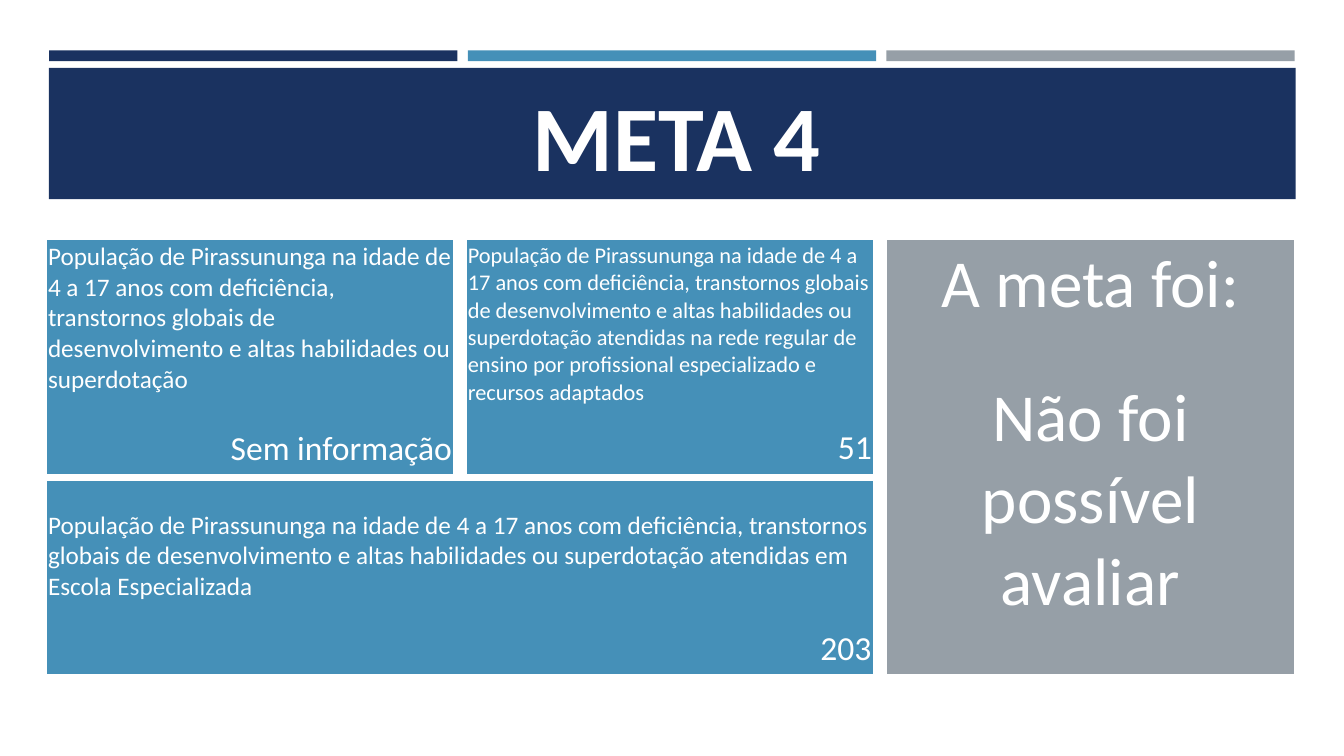
from dataclasses import dataclass

from pptx import Presentation
from pptx.dml.color import RGBColor
from pptx.enum.shapes import MSO_SHAPE
from pptx.enum.text import MSO_ANCHOR, PP_ALIGN
from pptx.util import Cm, Pt

RECTANGLE = MSO_SHAPE.RECTANGLE
BOTTOM, MIDDLE = MSO_ANCHOR.BOTTOM, MSO_ANCHOR.MIDDLE
LEFT, CENTER, RIGHT = PP_ALIGN.LEFT, PP_ALIGN.CENTER, PP_ALIGN.RIGHT
PLAIN_TABLE_STYLE = "{2D5ABB26-0587-4C30-8999-92F81FD0307C}"
BLANK_LAYOUT = 6


@dataclass(frozen=True)
class Theme:
    """Colours, font and type sizes of the slide."""

    navy: RGBColor = RGBColor(0x1A, 0x32, 0x60)
    blue: RGBColor = RGBColor(0x45, 0x90, 0xB8)
    gray: RGBColor = RGBColor(0x96, 0x9F, 0xA7)
    white: RGBColor = RGBColor(0xFF, 0xFF, 0xFF)
    font: str = "Calibri"
    title: int = 66
    verdict: int = 48
    value: int = 24
    label: int = 18
    long_label: int = 16


THEME = Theme()
POPULATION = (
    "População de Pirassununga na idade de 4 a 17 anos com deficiência, "
    "transtornos globais de desenvolvimento e altas habilidades ou superdotação"
)


def add_bar(slide, left, top, width, height, color):
    """Draw a plain filled rectangle, measured in centimetres."""
    shape = slide.shapes.add_shape(RECTANGLE, Cm(left), Cm(top), Cm(width), Cm(height))
    shape.shadow.inherit = False
    shape.fill.solid()
    shape.fill.fore_color.rgb = color
    shape.line.fill.background()


def write(text_frame, text, size, alignment, bold=False):
    """Put one white run into the first paragraph of a text frame."""
    paragraph = text_frame.paragraphs[0]
    paragraph.alignment = alignment
    run = paragraph.add_run()
    run.text = text
    run.font.name = THEME.font
    run.font.size = Pt(size)
    run.font.bold = bold
    run.font.color.rgb = THEME.white


def add_title(slide, text):
    """Place the title over the banner."""
    text_box = slide.shapes.add_textbox(Cm(1.83), Cm(1.96), Cm(30.43), Cm(2.82))
    text_frame = text_box.text_frame
    text_frame.word_wrap = True
    text_frame.vertical_anchor = BOTTOM
    text_frame.margin_top = text_frame.margin_bottom = 0
    write(text_frame, text, THEME.title, CENTER, bold=True)


def add_card(slide, left, top, width, color, rows):
    """Add a one-column table; rows hold height, text, size, alignment and anchor."""
    height = sum(row[0] for row in rows)
    frame = slide.shapes.add_table(
        len(rows), 1, Cm(left), Cm(top), Cm(width), Cm(height)
    )
    table = frame.table
    table.first_row = table.horz_banding = False
    table._tbl.tblPr[0].text = PLAIN_TABLE_STYLE
    for index, (row_height, text, size, alignment, anchor) in enumerate(rows):
        table.rows[index].height = Cm(row_height)
        cell = table.cell(index, 0)
        cell.fill.solid()
        cell.fill.fore_color.rgb = color
        cell.vertical_anchor = anchor
        cell.margin_left = cell.margin_right = cell.margin_top = Cm(0.03)
        cell.margin_bottom = Cm(0.13)
        write(cell.text_frame, text, size, alignment)


def add_indicator(slide, left, top, width, heights, label, label_size, value):
    """Add a blue card with a label above its value."""
    rows = [
        (heights[0], label, label_size, LEFT, BOTTOM),
        (heights[1], value, THEME.value, RIGHT, BOTTOM),
    ]
    add_card(slide, left, top, width, THEME.blue, rows)


def main():
    """Build the slide and save it."""
    presentation = Presentation()
    presentation.slide_width = Cm(33.87)
    presentation.slide_height = Cm(19.05)
    slide = presentation.slides.add_slide(presentation.slide_layouts[BLANK_LAYOUT])

    for column, color in enumerate((THEME.navy, THEME.blue, THEME.gray)):
        add_bar(slide, 1.24 + column * 10.55, 1.27, 10.29, 0.27, color)
    add_bar(slide, 1.23, 1.71, 31.42, 3.31, THEME.navy)
    add_title(slide, "META 4")

    first_column, cards_top = 1.18, 6.05
    add_indicator(
        slide, first_column, cards_top, 10.24, (3.07, 1.93),
        POPULATION, THEME.label, "Sem informação",
    )
    add_indicator(
        slide, 11.76, cards_top, 10.24, (4.32, 1.57),
        POPULATION + " atendidas na rede regular de ensino por profissional "
        "especializado e recursos adaptados",
        THEME.long_label, "51",
    )
    add_indicator(
        slide, first_column, 12.11, 20.81, (3.2, 1.68),
        POPULATION + " atendidas em Escola Especializada", THEME.label, "203",
    )
    verdict_rows = [
        (2.28, "A meta foi:", THEME.verdict, CENTER, BOTTOM),
        (8.66, "Não foi possível avaliar", THEME.verdict, CENTER, MIDDLE),
    ]
    add_card(slide, 22.35, cards_top, 10.26, THEME.gray, verdict_rows)

    presentation.save("out.pptx")


if __name__ == "__main__":
    main()
